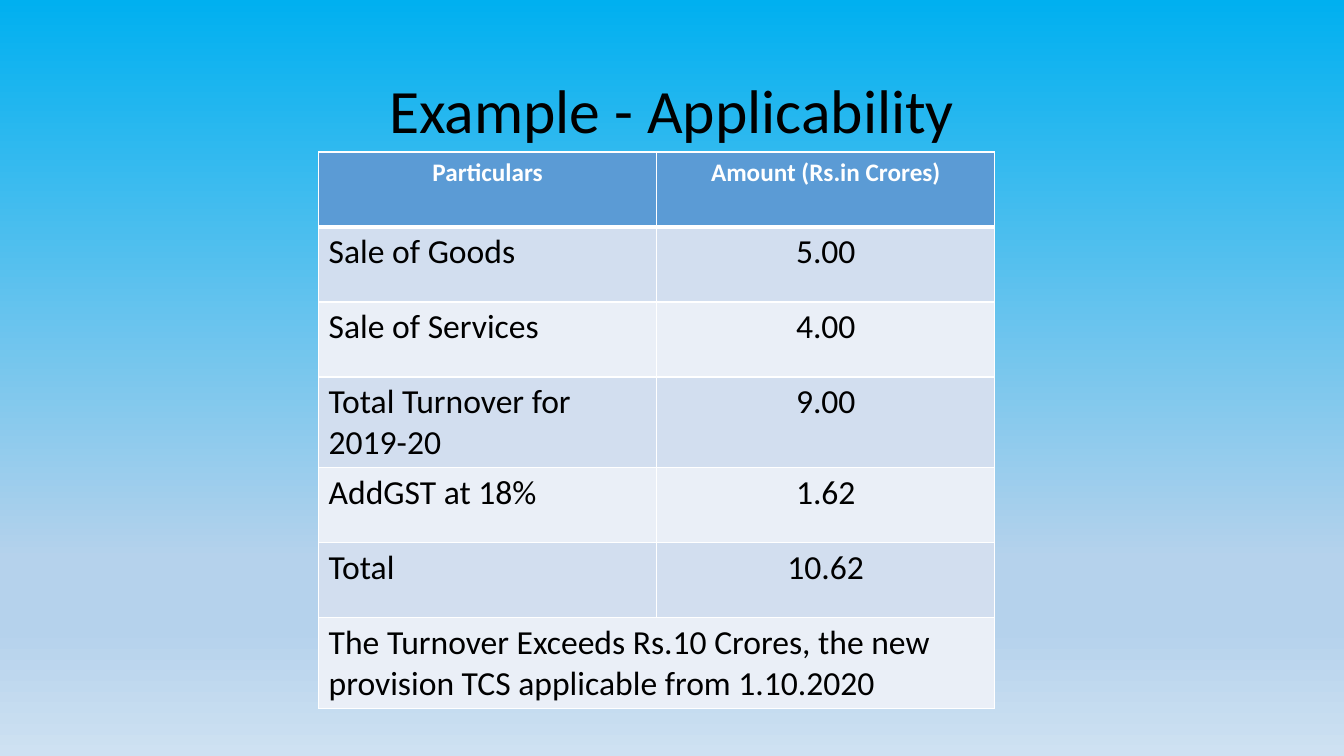
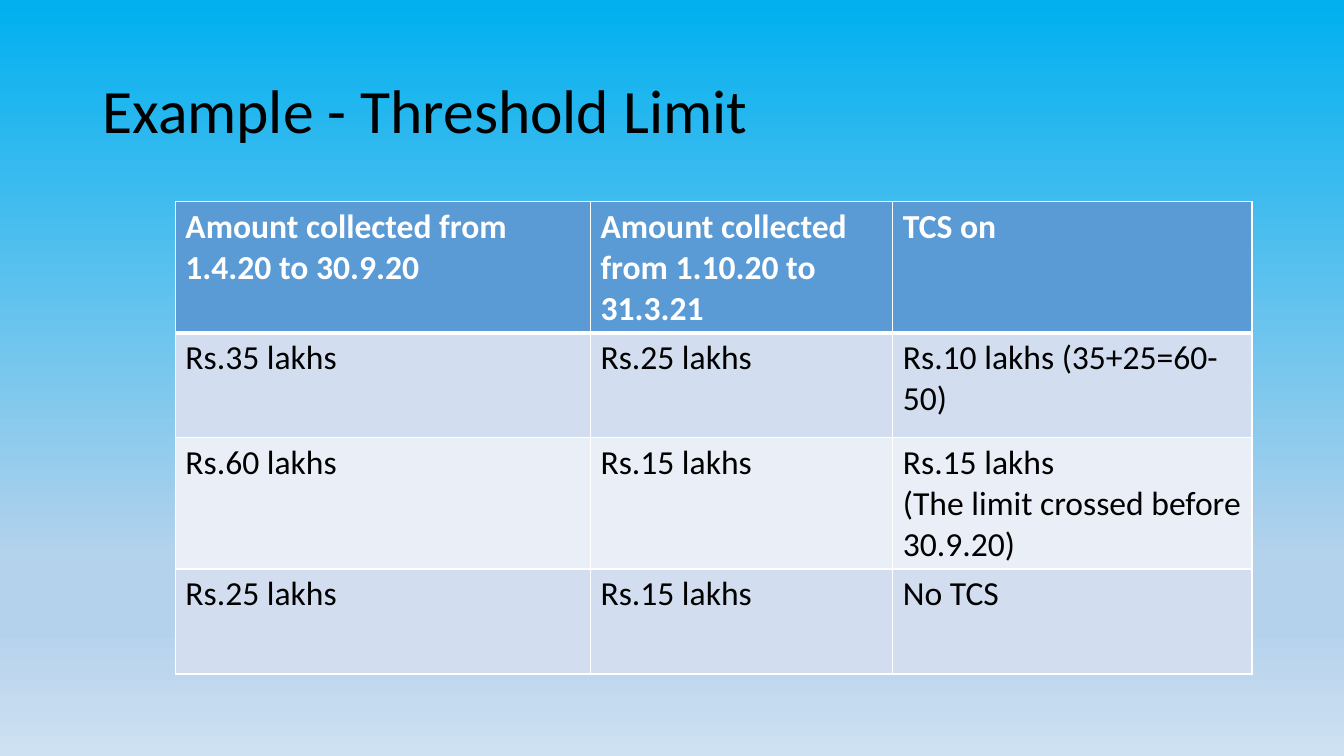
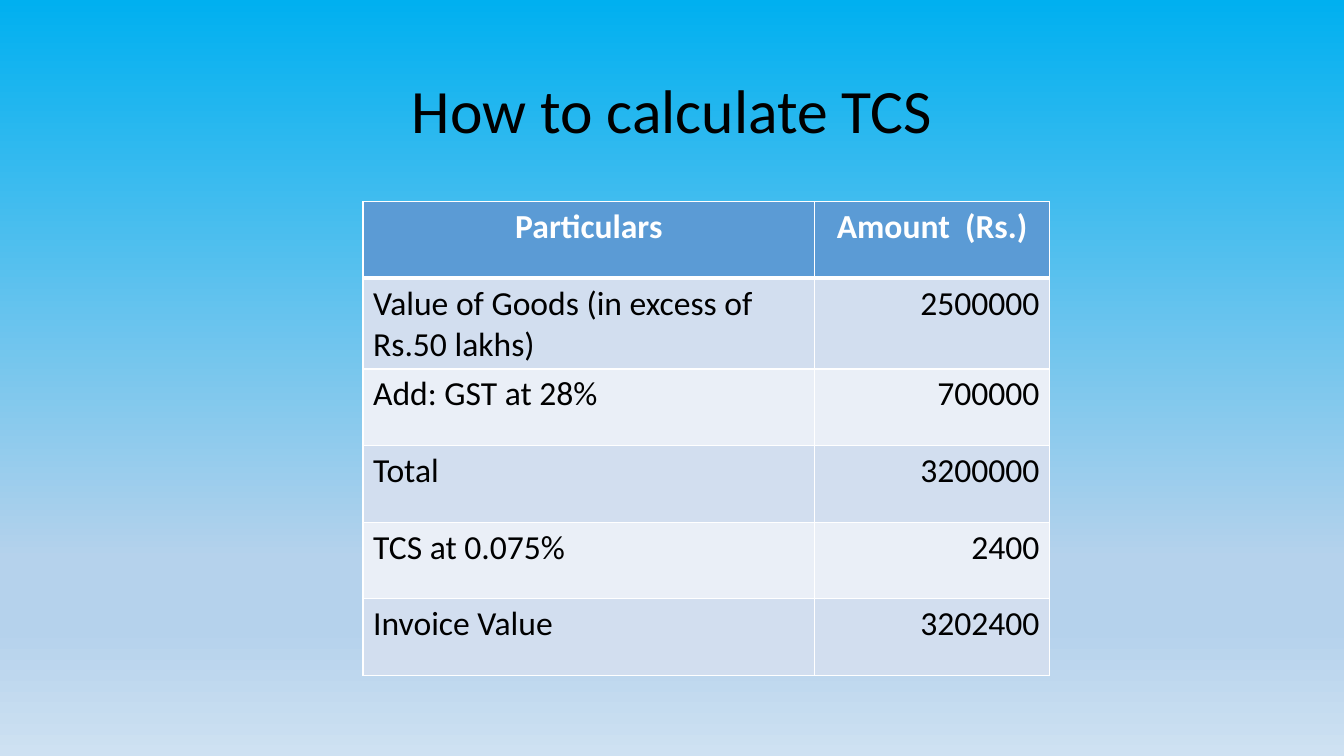
"""Build three slides of worked examples on tax collected at source."""
from lxml.etree import SubElement
from pptx import Presentation
from pptx.dml.color import RGBColor
from pptx.enum.text import MSO_ANCHOR, PP_ALIGN
from pptx.oxml import parse_xml
from pptx.oxml.ns import nsdecls, qn
from pptx.util import Cm, Pt

LEFT, CENTER, RIGHT = PP_ALIGN.LEFT, PP_ALIGN.CENTER, PP_ALIGN.RIGHT
FONT = "Calibri"
BLACK = RGBColor(0x00, 0x00, 0x00)
WHITE = RGBColor(0xFF, 0xFF, 0xFF)
HEADER_BLUE = RGBColor(0x5B, 0x9B, 0xD5)
BANDS = [RGBColor(0xD2, 0xDE, 0xEF), RGBColor(0xEA, 0xEF, 0xF7)]
SKY_STOPS = [
    (0, RGBColor(0x00, 0xB0, 0xF0)),
    (74, RGBColor(0xB5, 0xD2, 0xEC)),
    (83, RGBColor(0xB5, 0xD2, 0xEC)),
    (100, RGBColor(0xCE, 0xE1, 0xF2)),
]


def set_background(master):
    fill = master.background.fill
    fill.gradient()
    fill.gradient_angle = 270
    stops = master.element.find(".//" + qn("a:gsLst"))
    for stop in list(stops):
        stops.remove(stop)
    for position, color in SKY_STOPS:
        stop = SubElement(stops, qn("a:gs"), pos=str(position * 1000))
        SubElement(stop, qn("a:srgbClr"), val=str(color))


def style_paragraph(paragraph, size, color, alignment, bold=False):
    paragraph.alignment = alignment
    font = paragraph.font
    font.name, font.size, font.bold = FONT, Pt(size), bold
    font.color.rgb = color


def add_title(slide, text, alignment):
    box = slide.shapes.add_textbox(Cm(2.33), Cm(1.01), Cm(29.21), Cm(3.68))
    frame = box.text_frame
    frame.word_wrap = True
    frame.vertical_anchor = MSO_ANCHOR.MIDDLE
    frame.text = text
    paragraph = frame.paragraphs[0]
    paragraph.line_spacing = 0.9
    style_paragraph(paragraph, 44, BLACK, alignment)


def set_borders(cell, top, bottom):
    widths = {"lnL": 1, "lnR": 1, "lnT": top, "lnB": bottom}
    properties = cell._tc.get_or_add_tcPr()
    for index, (side, width) in enumerate(widths.items()):
        properties.insert(index, parse_xml(
            f'<a:{side} {nsdecls("a")} w="{Pt(width)}"><a:solidFill>'
            f'<a:srgbClr val="{WHITE}"/></a:solidFill></a:{side}>'))


def add_table(slide, left, top, widths, row_height, rows, alignments,
              header_alignment, header_size=24):
    frame = slide.shapes.add_table(
        len(rows), len(widths), Cm(left), Cm(top),
        Cm(sum(widths)), Cm(row_height * len(rows)))
    table = frame.table
    for column, width in zip(table.columns, widths):
        column.width = Cm(width)
    for row_index, texts in enumerate(rows):
        header = row_index == 0
        table.rows[row_index].height = Cm(row_height)
        for column_index, alignment in enumerate(alignments):
            cell = table.cell(row_index, column_index)
            cell.fill.solid()
            cell.fill.fore_color.rgb = (
                HEADER_BLUE if header else BANDS[(row_index - 1) % 2])
            set_borders(cell, 3 if row_index == 1 else 1, 3 if header else 1)
            if column_index >= len(texts):
                continue
            cell.text = texts[column_index]
            for paragraph in cell.text_frame.paragraphs:
                if header:
                    style_paragraph(paragraph, header_size, WHITE,
                                    header_alignment, bold=True)
                else:
                    style_paragraph(paragraph, 24, BLACK, alignment)
        if len(texts) < len(widths):
            table.cell(row_index, len(texts) - 1).merge(
                table.cell(row_index, len(widths) - 1))


def add_applicability(slide):
    add_title(slide, "Example - Applicability", CENTER)
    rows = [
        ("Particulars", "Amount (Rs.in Crores)"),
        ("Sale of Goods", "5.00"),
        ("Sale of Services", "4.00"),
        ("Total Turnover for 2019-20", "9.00"),
        ("AddGST at 18%", "1.62"),
        ("Total", "10.62"),
        ("The Turnover Exceeds Rs.10 Crores, the new provision TCS "
         "applicable from 1.10.2020",),
    ]
    add_table(slide, 8.03, 3.83, [8.52, 8.52], 1.89, rows,
              [LEFT, CENTER], CENTER, header_size=18)


def add_threshold(slide):
    add_title(slide, "Example - Threshold Limit", LEFT)
    rows = [
        ("Amount collected from 1.4.20 to 30.9.20",
         "Amount collected from 1.10.20 to 31.3.21", "TCS on"),
        ("Rs.35 lakhs", "Rs.25 lakhs", "Rs.10 lakhs (35+25=60-50)"),
        ("Rs.60 lakhs", "Rs.15 lakhs",
         "Rs.15 lakhs\n(The limit crossed before 30.9.20)"),
        ("Rs.25 lakhs", "Rs.15 lakhs", "No TCS"),
    ]
    add_table(slide, 4.42, 5.08, [10.46, 7.62, 9.05], 2.65, rows,
              [LEFT, LEFT, LEFT], LEFT)


def add_calculation(slide):
    add_title(slide, "How to calculate TCS", CENTER)
    rows = [
        ("Particulars", "Amount  (Rs.)"),
        ("Value of Goods (in excess of Rs.50 lakhs)", "2500000"),
        ("Add: GST at 28%", "700000"),
        ("Total", "3200000"),
        ("TCS at 0.075%", "2400"),
        ("Invoice Value", "3202400"),
    ]
    add_table(slide, 9.15, 5.08, [11.38, 5.92], 1.93, rows,
              [LEFT, RIGHT], CENTER)


def main():
    presentation = Presentation()
    presentation.slide_width, presentation.slide_height = Cm(33.87), Cm(19.05)
    set_background(presentation.slide_master)
    blank = presentation.slide_layouts[6]
    for add_content in (add_applicability, add_threshold, add_calculation):
        add_content(presentation.slides.add_slide(blank))
    presentation.save("out.pptx")


if __name__ == "__main__":
    main()
